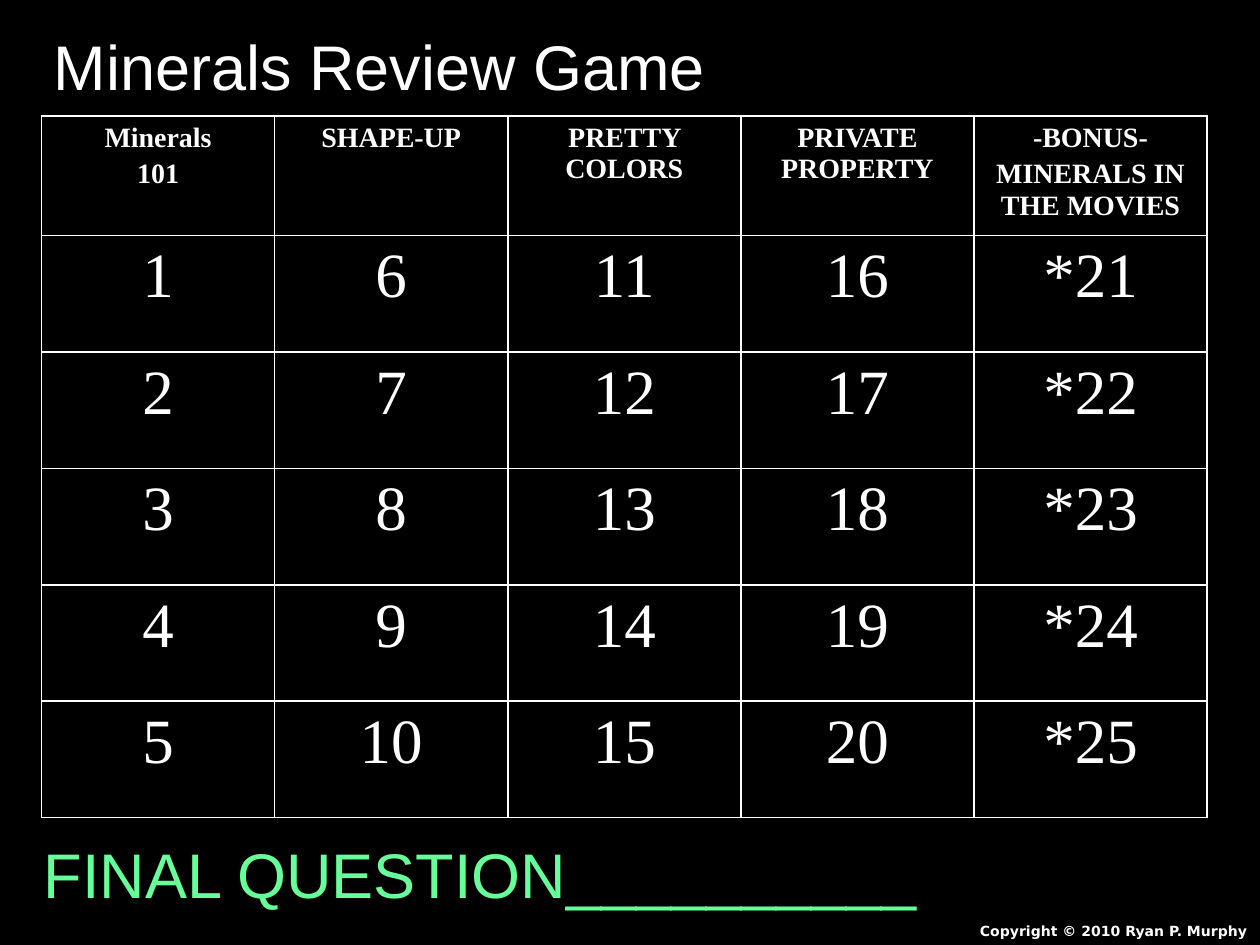
import pptx
import pptx.util
import pptx.dml.color
import pptx.enum.text
import pptx.oxml

W, H = 10, 7.5
ALIGN = pptx.enum.text.PP_ALIGN
WHITE, GREEN, BLACK = "FFFFFF", "66FF99", "000000"
NS = "http://schemas.openxmlformats.org/drawingml/2006/main"

TITLE = dict(size=36, name="Arial", color=WHITE)
FINAL = dict(size=36, name="Arial", color=GREEN)
CREDIT = dict(size=8, name="DejaVu Sans", color=WHITE, bold=True)
HEADING = dict(size=16, name="Times New Roman", color=WHITE, bold=True)
NUMBER = dict(size=36, name="Times New Roman", color=WHITE, bold=False)

# One entry per category; each inner string is a paragraph
CATEGORIES = [["Minerals", "101"], ["SHAPE-UP"], ["PRETTY COLORS"],
              ["PRIVATE\vPROPERTY"], ["-BONUS-", "MINERALS IN THE MOVIES"]]
QUESTIONS = 5  # per category


def rgb(value):
    return pptx.dml.color.RGBColor.from_string(value)


def inches(box):
    return [pptx.util.Inches(v) for v in box]


def write(tf, lines, fmt, align):
    """Fill a text frame, one paragraph per line."""
    tf.word_wrap = True
    for i, line in enumerate(lines):
        p = tf.add_paragraph() if i else tf.paragraphs[0]
        p.text, p.alignment = line, align
        if i:
            p.space_before = pptx.util.Pt(0.2 * fmt["size"])
        for r in p.runs:
            for key, value in fmt.items():
                if key == "color":
                    r.font.color.rgb = rgb(value)
                else:
                    setattr(r.font, key, pptx.util.Pt(value) if key == "size" else value)


def add_text(slide, box, text, fmt, align=ALIGN.LEFT):
    sp = slide.shapes.add_textbox(*inches(box))
    write(sp.text_frame, [text], fmt, align)


def add_borders(cell, color, points):
    tcPr = cell._tc.get_or_add_tcPr()
    for side in "LRTB":
        tcPr.append(pptx.oxml.parse_xml(
            f'<a:ln{side} xmlns:a="{NS}" w="{pptx.util.Pt(points)}">'
            f'<a:solidFill><a:srgbClr val="{color}"/></a:solidFill></a:ln{side}>'))


def add_board(slide, box, header_h):
    """Category headings over a grid of numbers that run down each column."""
    cols, rows = len(CATEGORIES), QUESTIONS + 1
    table = slide.shapes.add_table(rows, cols, *inches(box)).table
    table.first_row = table.horz_banding = False
    for col in table.columns:
        col.width = pptx.util.Inches(box[2] / cols)
    for i, row in enumerate(table.rows):
        row.height = pptx.util.Inches((box[3] - header_h) / QUESTIONS if i else header_h)

    for c, heading in enumerate(CATEGORIES):
        star = "*" if c == cols - 1 else ""  # bonus column
        for r in range(rows):
            cell = table.cell(r, c)
            add_borders(cell, WHITE, 1)
            cell.fill.background()
            lines = [f"{star}{c * QUESTIONS + r}"] if r else heading
            write(cell.text_frame, lines, NUMBER if r else HEADING, ALIGN.CENTER)


def main():
    prs = pptx.Presentation()
    prs.slide_width, prs.slide_height = inches((W, H))
    slide = prs.slides.add_slide(prs.slide_layouts[6])
    slide.background.fill.solid()
    slide.background.fill.fore_color.rgb = rgb(BLACK)

    # Game board
    add_board(slide, (0.33, 0.92, 9.25, 5.57), header_h=0.95)
    # Footer credit, flush with the right edge
    add_text(slide, (W - 2.92, 7.27, 2.92, 0.23),
             "Copyright © 2010 Ryan P. Murphy", CREDIT, ALIGN.RIGHT)
    # Title and final question
    add_text(slide, (0.33, 0.17, 8.67, 0.7), "Minerals Review Game", TITLE)
    add_text(slide, (0.25, 6.58, 7.33, 0.7), "FINAL QUESTION" + "_" * 10, FINAL)

    prs.save("out.pptx")


if __name__ == "__main__":
    main()
